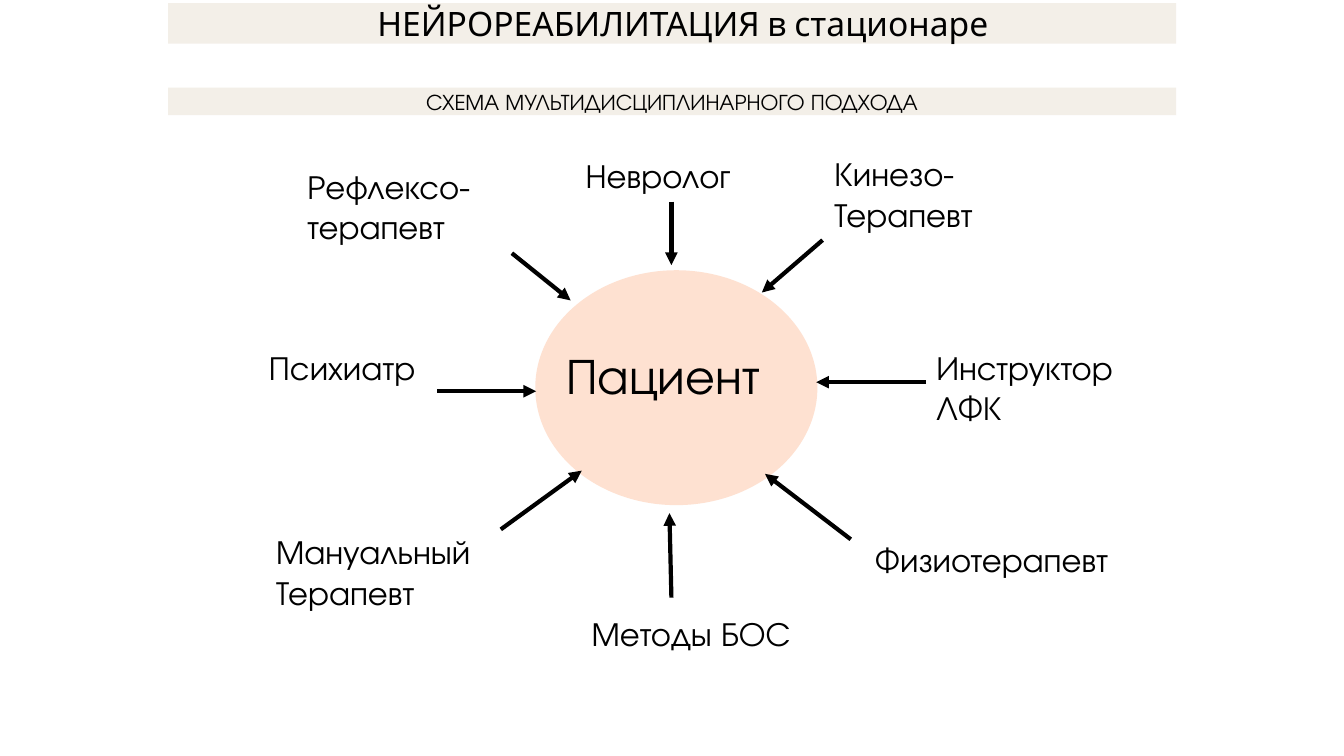
from lxml.etree import SubElement
from pptx import Presentation
from pptx.dml.color import RGBColor
from pptx.enum.shapes import MSO_CONNECTOR as Connector, MSO_SHAPE as Preset
from pptx.enum.text import MSO_ANCHOR as Anchor, MSO_AUTO_SIZE as AutoSize, PP_ALIGN as Align
from pptx.oxml.ns import qn
from pptx.util import Cm, Pt

# Content: lengths in centimetres
TITLE = "НЕЙРОРЕАБИЛИТАЦИЯ в стационаре"
SUBTITLE = "СХЕМА МУЛЬТИДИСЦИПЛИНАРНОГО ПОДХОДА"
PATIENT = "Пациент"

# Each specialist: lines, (left, top, width), arrow start, arrow end
SPECIALISTS = [
    (["Невролог"], (14.76, 3.91, 4.04), (16.92, 5.08), (16.92, 6.68)),
    (["Кинезо-", "Терапевт"], (21.03, 3.86, 5.08), (20.73, 6.05), (19.2, 7.37)),
    (["Инструктор ЛФК"], (23.6, 8.74, 5.26), (23.34, 9.63), (20.57, 9.63)),
    (["Физиотерапевт"], (22.05, 13.59, 6.25), (21.44, 13.59), (19.28, 11.94)),
    (["Методы БОС"], (14.91, 15.44, 5.64), (16.92, 15.06), (16.87, 12.93)),
    (["Мануальный", "Терапевт"], (6.96, 13.39, 5.74), (12.62, 13.34), (14.66, 11.86)),
    (["Психиатр"], (6.78, 8.74, 4.22), (11.02, 9.86), (13.51, 9.86)),
    (["Рефлексо-терапевт"], (7.75, 4.17, 5.05), (12.9, 6.38), (14.38, 7.57)),
]

COLORS = {"text": "000000", "band": "F3EFE8", "patient": "FEE1D1"}
BAND_LEFT, BAND_WIDTH = 4.24, 25.4
LINE_HEIGHT = 1.03
TITLE_FONT, FONT = "Cabin", "TeX Gyre Adventor"


def color(name):
    return RGBColor.from_string(COLORS[name])


def paint(shape, name):
    shape.fill.solid()
    shape.fill.fore_color.rgb = color(name)


def place(shape, left, top, width, height):
    shape.left, shape.top = Cm(left), Cm(top)
    shape.width, shape.height = Cm(width), Cm(height)


def write(box, lines, size, font=FONT, align=Align.LEFT, anchor=Anchor.TOP):
    frame = box.text_frame
    frame.word_wrap = True
    frame.auto_size = AutoSize.NONE
    frame.vertical_anchor = anchor
    frame.margin_left = frame.margin_right = 0
    frame.margin_top = frame.margin_bottom = 0
    for index, line in enumerate(lines):
        para = frame.add_paragraph() if index else frame.paragraphs[0]
        para.alignment = align
        span = para.add_run()
        span.text = line
        span.font.size = Pt(size)
        span.font.name = font
        span.font.color.rgb = color("text")


def add_text(page, lines, left, top, width, height, size, **style):
    box = page.shapes.add_textbox(Cm(left), Cm(top), Cm(width), Cm(height))
    write(box, lines, size, **style)
    return box


def add_arrow(page, start, end):
    points = [Cm(value) for value in start + end]
    arrow = page.shapes.add_connector(Connector.STRAIGHT, *points)
    arrow.line.width = Pt(3)
    arrow.line.color.rgb = color("text")
    SubElement(arrow.line._get_or_add_ln(), qn("a:tailEnd"), type="triangle")
    SubElement(arrow._element.spPr, qn("a:effectLst"))


def main():
    deck = Presentation()
    deck.slide_width, deck.slide_height = Cm(33.87), Cm(19.05)
    page = deck.slides.add_slide(deck.slide_layouts[5])

    # Heading bands
    title = page.shapes.title
    place(title, BAND_LEFT, 0.08, BAND_WIDTH, 1.02)
    paint(title, "band")
    write(title, [TITLE], 24, font=TITLE_FONT, align=Align.CENTER, anchor=Anchor.MIDDLE)
    title.text_frame.margin_left = Cm(0.54)
    subtitle = add_text(page, [SUBTITLE], BAND_LEFT, 2.21, BAND_WIDTH, 0.69, 16,
                        align=Align.CENTER)
    paint(subtitle, "band")

    # Patient in the centre
    circle = page.shapes.add_shape(Preset.OVAL, Cm(13.49), Cm(6.81), Cm(7.11), Cm(5.92))
    circle.shadow.inherit = False
    circle.line.fill.background()
    paint(circle, "patient")
    add_text(page, [PATIENT], 14.27, 8.66, 5.87, 1.55, 36)

    # Specialists and their arrows
    for lines, (left, top, width), start, end in SPECIALISTS:
        add_text(page, lines, left, top, width, LINE_HEIGHT * len(lines), 24)
        add_arrow(page, start, end)

    deck.save("out.pptx")


if __name__ == "__main__":
    main()
